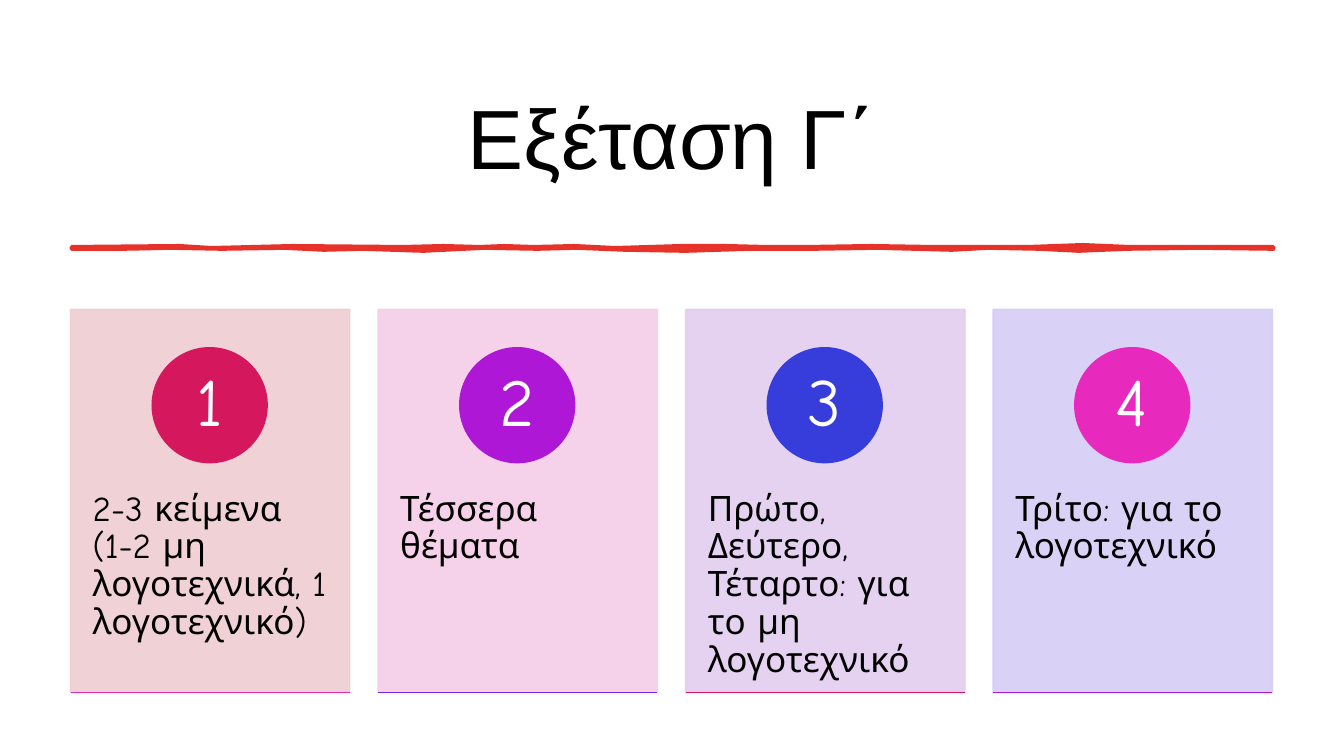
"""Builds a slide with a title, a hand-drawn rule and four numbered cards."""
import lxml.etree
import pptx
import pptx.dml.color
import pptx.enum.shapes
import pptx.enum.text
import pptx.oxml.ns
import pptx.util

RGB = pptx.dml.color.RGBColor
SHAPE = pptx.enum.shapes.MSO_SHAPE
ALIGN = pptx.enum.text.PP_ALIGN
ANCHOR = pptx.enum.text.MSO_ANCHOR
QN = pptx.oxml.ns.qn

PX = 9144
WIDE, HIGH = 1333, 750
LEFT, TOP, STEP = 70, 307, 305
CARD_W, CARD_H = 277, 380
BADGE = 114

BLACK = RGB(0x00, 0x00, 0x00)
WHITE = RGB(0xFF, 0xFF, 0xFF)
RED = RGB(0xE7, 0x32, 0x29)
ROSE = RGB(0xEF, 0xCC, 0xD2)
PINK = RGB(0xF6, 0xCD, 0xE8)
LILAC = RGB(0xE3, 0xCC, 0xEF)
MAUVE = RGB(0xD5, 0xCD, 0xF6)
CRIMSON = RGB(0xD5, 0x17, 0x5E)
PURPLE = RGB(0xAE, 0x17, 0xD5)
BLUE = RGB(0x37, 0x3D, 0xDB)
MAGENTA = RGB(0xE7, 0x29, 0xBE)
VIOLET = RGB(0x71, 0x29, 0xE7)

CARDS = [
    ("2-3 κείμενα (1-2 μη λογοτεχνικά, 1 λογοτεχνικό)", ROSE, CRIMSON, MAGENTA),
    ("Τέσσερα θέματα", PINK, PURPLE, VIOLET),
    ("Πρώτο, Δεύτερο, Τέταρτο: για το μη λογοτεχνικό", LILAC, BLUE, CRIMSON),
    ("Τρίτο: για το λογοτεχνικό", MAUVE, MAGENTA, PURPLE),
]
UPPER = [(71, 245), (178, 244), (210, 246), (290, 244), (400, 245), (440, 244),
         (476, 245), (500, 244), (530, 245), (570, 244), (610, 246), (676, 244),
         (720, 244), (760, 245), (800, 245), (864, 244), (926, 245), (1020, 245),
         (1074, 243), (1120, 245), (1210, 245), (1263, 245)]
LOWER = [(1263, 247), (1190, 246), (1117, 247), (1070, 249), (1031, 247),
         (980, 246), (944, 248), (870, 246), (807, 247), (744, 247), (680, 249),
         (620, 248), (572, 246), (533, 247), (480, 246), (420, 249), (360, 247),
         (321, 248), (282, 246), (220, 247), (170, 246), (122, 247), (71, 247)]


def paint(shape, color, width=1, alpha=None):
    """Give a shape one colour for fill and line."""
    shape.shadow.inherit = False
    shape.fill.solid()
    shape.fill.fore_color.rgb = color
    shape.line.color.rgb = color
    shape.line.width = pptx.util.Pt(width)
    if alpha:
        for node in shape.element.spPr.iter(QN("a:srgbClr")):
            lxml.etree.SubElement(node, QN("a:alpha"), val=str(alpha * 1000))


def add_form(slide, kind, box, color, alpha=None):
    """Add a painted preset shape."""
    shape = slide.shapes.add_shape(kind, *(n * PX for n in box))
    paint(shape, color, alpha=alpha)
    return shape


def write(shape, text, font, size, color, align, anchor, inset, lead=0.9):
    """Set the text of a shape with its font and insets."""
    frame = shape.text_frame
    frame.word_wrap = True
    frame.vertical_anchor = anchor
    frame.margin_left = frame.margin_right = inset[0] * PX
    frame.margin_top = frame.margin_bottom = inset[1] * PX
    para = frame.paragraphs[0]
    para.text = text
    para.alignment = align
    para.line_spacing = lead
    para.font.name = font
    para.font.size = pptx.util.Pt(size)
    para.font.color.rgb = color


def add_box(slide, box, *style):
    """Add a text box."""
    shape = slide.shapes.add_textbox(*(n * PX for n in box))
    write(shape, *style)


def add_rule(slide):
    """Add the wavering rule below the title."""
    pen = slide.shapes.build_freeform(*UPPER[0], scale=PX)
    pen.add_line_segments(UPPER[1:] + LOWER, close=True)
    paint(pen.convert_to_shape(), RED, 2.75)


def add_edge(slide, left, top, color):
    """Add the thin line along the foot of a card."""
    edge = slide.shapes.add_connector(
        pptx.enum.shapes.MSO_CONNECTOR.STRAIGHT,
        left * PX, top * PX, (left + CARD_W) * PX, top * PX)
    edge.line.color.rgb = color
    edge.line.width = pptx.util.Pt(1)
    lxml.etree.SubElement(edge.element.spPr, QN("a:effectLst"))


def add_card(slide, index, text, tint, disc, foot):
    """Add one card with its numbered badge."""
    left = LEFT + index * STEP
    add_form(slide, SHAPE.RECTANGLE, (left, TOP, CARD_W, CARD_H), tint, 90)
    add_box(slide, (left, TOP + 144, CARD_W, 228), text, "Comic Neue", 25,
            BLACK, ALIGN.LEFT, ANCHOR.TOP, (22, 36))
    spot = (left + (CARD_W - BADGE) // 2, TOP + 38, BADGE, BADGE)
    badge = add_form(slide, SHAPE.OVAL, spot, disc)
    write(badge, str(index + 1), "Comic Neue", 48, WHITE, ALIGN.CENTER,
          ANCHOR.MIDDLE, (9, 1))
    add_edge(slide, left, TOP + CARD_H, foot)


def main():
    """Build and save the slide."""
    deck = pptx.Presentation()
    deck.slide_width = WIDE * PX
    deck.slide_height = HIGH * PX
    slide = deck.slides.add_slide(deck.slide_layouts[6])
    slide.background.fill.solid()
    slide.background.fill.fore_color.rgb = WHITE
    add_box(slide, (69, 69, 1194, 144), "Εξέταση Γ΄", "Arial", 60, BLACK,
            ALIGN.CENTER, ANCHOR.MIDDLE, (10, 5))
    add_rule(slide)
    for index, card in enumerate(CARDS):
        add_card(slide, index, *card)
    deck.save("out.pptx")


if __name__ == "__main__":
    main()
